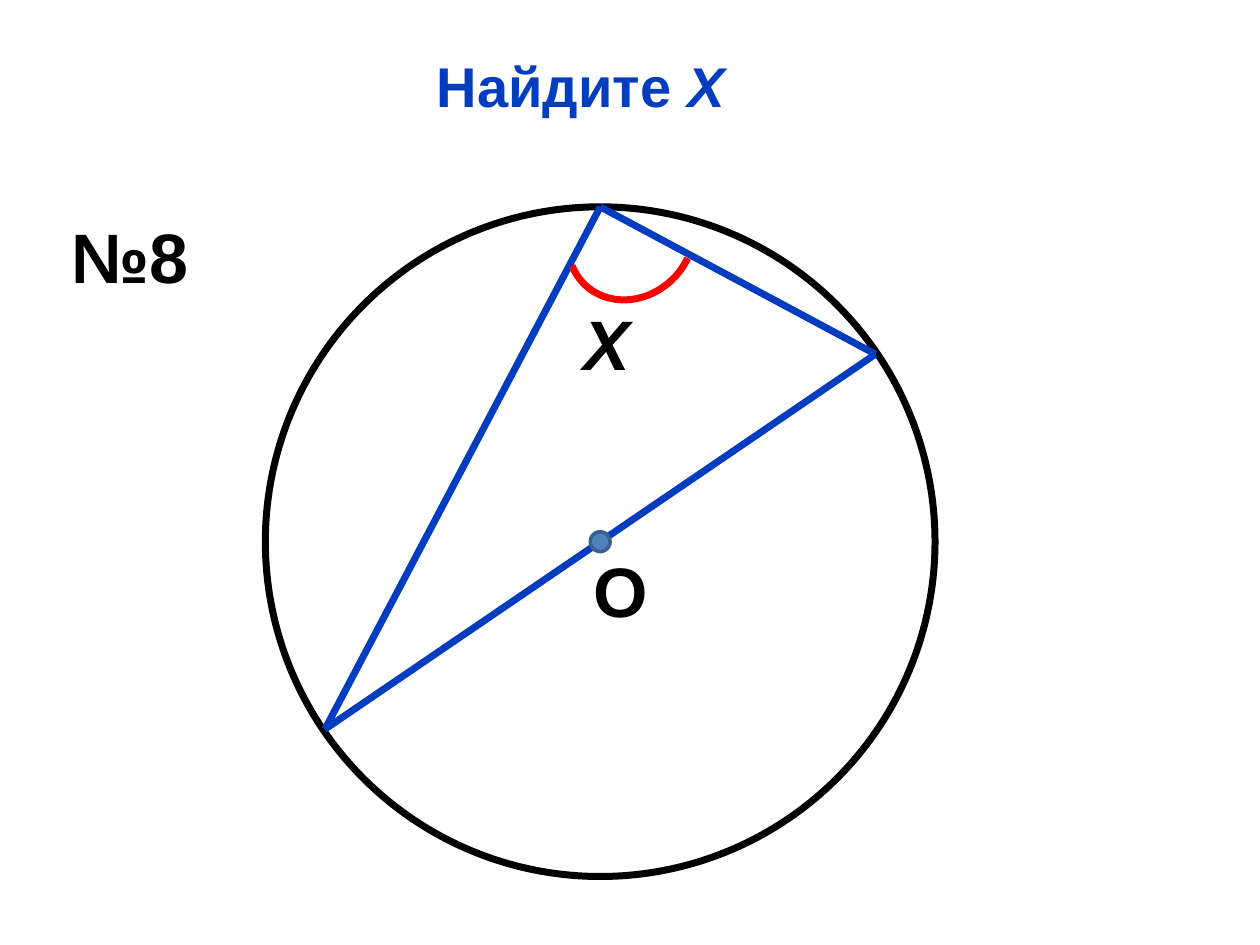
"""Build the geometry slide: find angle X inscribed on a diameter."""
from lxml import etree
from pptx import Presentation
from pptx.dml.color import RGBColor
from pptx.enum.shapes import MSO_CONNECTOR, MSO_SHAPE
from pptx.enum.text import MSO_AUTO_SIZE, PP_ALIGN
from pptx.oxml.ns import qn
from pptx.util import Cm, Pt

STRAIGHT = MSO_CONNECTOR.STRAIGHT
OVAL, ARC = MSO_SHAPE.OVAL, MSO_SHAPE.ARC
GROW = MSO_AUTO_SIZE.SHAPE_TO_FIT_TEXT
CENTER, LEFT = PP_ALIGN.CENTER, PP_ALIGN.LEFT
COLORS = {
    "white": "FFFFFF", "black": "000000", "blue": "033DBF",
    "red": "FF0000", "dot": "4F81BD", "dot_edge": "3A5F8C",
}


def rgb(name):
    return RGBColor.from_string(COLORS[name])


def add_outlined(kind, box, fill, edge, weight):
    outlined = slide.shapes.add_shape(kind, *map(Cm, box))
    outlined.shadow.inherit = False
    if fill:
        outlined.fill.solid()
        outlined.fill.fore_color.rgb = rgb(fill)
    else:
        outlined.fill.background()
    outlined.line.color.rgb = rgb(edge)
    outlined.line.width = Pt(weight)
    return outlined


prs = Presentation()
prs.slide_width, prs.slide_height = Cm(25.4), Cm(19.05)
slide = prs.slides.add_slide(prs.slide_layouts[6])

center_x, center_y, radius, dot_radius = 12.1, 10.92, 6.75, 0.2
apex = (center_x, center_y - radius)
right_end = (17.65, 7.14)
left_end = (2 * center_x - right_end[0], 2 * center_y - right_end[1])

add_outlined(OVAL, (center_x - radius, center_y - radius, 2 * radius, 2 * radius),
             "white", "black", 4)

for start, end in [(left_end, apex), (left_end, right_end), (right_end, apex)]:
    side = slide.shapes.add_connector(STRAIGHT, *map(Cm, start + end))
    side.line.color.rgb = rgb("blue")
    side.line.width = Pt(4)
    etree.SubElement(side._element.spPr, qn("a:effectLst"))

add_outlined(OVAL, (center_x - dot_radius, center_y - dot_radius, 2 * dot_radius, 2 * dot_radius),
             "dot", "dot_edge", 2)

angle_mark = add_outlined(ARC, (11.53, 3.43, 2.39, 2.69), None, "red", 4)
angle_mark.rotation = 45.2
angle_mark.adjustments[0] = 201.28
angle_mark.adjustments[1] = 65.29

labels = [
    ((0, 0.91, 23.42, 1.6), [("Найдите ", False), ("Х", True)], 32, "blue", CENTER),
    ((11.71, 10.92, 2.39, 1.96), [("О", False)], 40, "black", LEFT),
    ((11.51, 5.94, 1.78, 1.96), [("Х", True)], 40, "black", LEFT),
    ((1.19, 4.17, 4.57, 1.96), [("№8", False)], 40, "black", LEFT),
]
for box, pieces, size, color, align in labels:
    frame = slide.shapes.add_textbox(*map(Cm, box)).text_frame
    frame.word_wrap = True
    frame.auto_size = GROW
    paragraph = frame.paragraphs[0]
    paragraph.alignment = align
    paragraph.font.name = "Arial"
    paragraph.font.size = Pt(size)
    paragraph.font.bold = True
    paragraph.font.color.rgb = rgb(color)
    for words, italic in pieces:
        run = paragraph.add_run()
        run.text = words
        run.font.italic = italic

prs.save("out.pptx")
